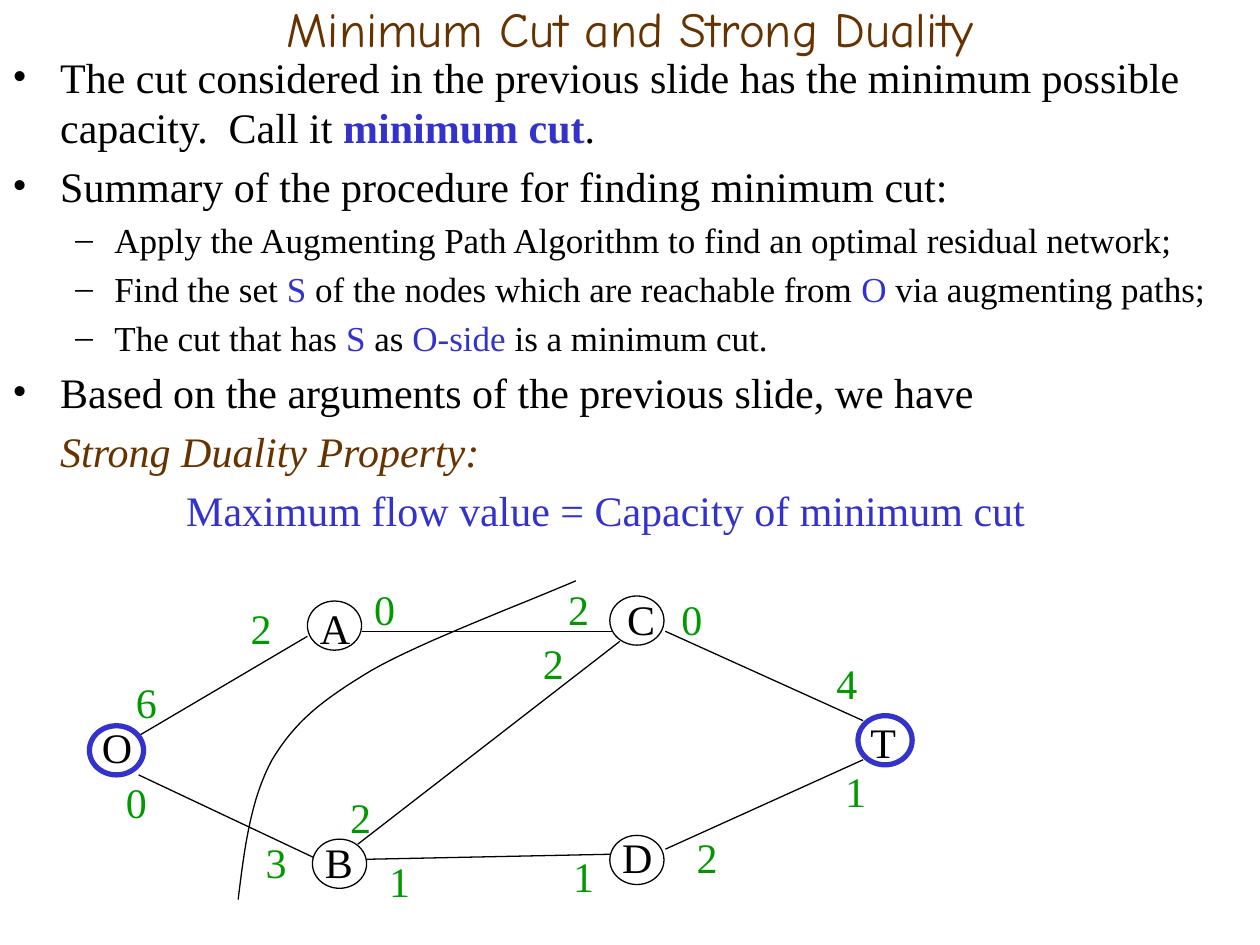
from lxml import etree
from pptx import Presentation
from pptx.dml.color import RGBColor
from pptx.enum.shapes import MSO_CONNECTOR, MSO_SHAPE
from pptx.enum.text import MSO_ANCHOR, PP_ALIGN
from pptx.oxml.ns import qn
from pptx.util import Inches, Pt

STRAIGHT = MSO_CONNECTOR.STRAIGHT
OVAL = MSO_SHAPE.OVAL
MIDDLE = MSO_ANCHOR.MIDDLE
CENTER = PP_ALIGN.CENTER

BLACK = RGBColor(0x00, 0x00, 0x00)
WHITE = RGBColor(0xFF, 0xFF, 0xFF)
BLUE = RGBColor(0x33, 0x33, 0xCC)
BROWN = RGBColor(0x66, 0x33, 0x00)
GREEN = RGBColor(0x00, 0x99, 0x00)
SERIF = "Times New Roman"
TITLE_FONT = "Comic Neue"

TITLE = "Minimum Cut and Strong Duality"

# Paragraph style: size, left margin, first-line indent, bullet
STYLES = {
    "point": (24, 0.38, -0.38, "•"),
    "step": (20, 0.81, -0.31, "–"),
    "heading": (24, 0.38, 0, None),
    "formula": (24, 1.38, 0, None),
}
# Each run: text, colour, bold, italic
PLAIN = (BLACK, False, False)
KEY = (BLUE, False, False)
BODY = [
    ("point", [
        ("The cut considered in the previous slide has the minimum possible capacity.  Call it ", *PLAIN),
        ("minimum cut", BLUE, True, False),
        (".", *PLAIN)]),
    ("point", [("Summary of the procedure for finding minimum cut:", *PLAIN)]),
    ("step", [("Apply the Augmenting Path Algorithm to find an optimal residual network;", *PLAIN)]),
    ("step", [
        ("Find the set ", *PLAIN), ("S", *KEY),
        (" of the nodes which are reachable from ", *PLAIN), ("O", *KEY),
        (" via augmenting paths;", *PLAIN)]),
    ("step", [
        ("The cut that has ", *PLAIN), ("S", *KEY), (" as ", *PLAIN),
        ("O-side", *KEY), (" is a minimum cut.", *PLAIN)]),
    ("point", [("Based on the arguments of the previous slide, we have", *PLAIN)]),
    ("heading", [("Strong Duality Property:", BROWN, False, True)]),
    ("formula", [("Maximum flow value = Capacity of minimum cut", *KEY)]),
]

NODE_SIZE = (0.43, 0.39)
# Node: letter, ellipse left and top, letter left and top, outline colour and width
NODES = [
    ("O", 0.71, 5.76, 0.71, 5.68, BLUE, 3),
    ("A", 2.44, 4.77, 2.44, 4.73, BLACK, 0.75),
    ("B", 2.48, 6.66, 2.48, 6.59, BLACK, 0.75),
    ("C", 4.84, 4.73, 4.88, 4.66, BLACK, 0.75),
    ("D", 4.84, 6.63, 4.84, 6.55, BLACK, 0.75),
    ("T", 6.81, 5.68, 6.81, 5.64, BLUE, 3),
]
# Edge: start x, y, end x, y, then the residual capacity (text, left, top) at each end
EDGES = [
    (1.1, 5.84, 2.44, 5.05, ("6", 0.98, 5.32), ("2", 1.89, 4.73)),  # O-A
    (1.1, 6.15, 2.52, 6.82, ("0", 0.9, 6.11), ("3", 2.01, 6.59)),  # O-B
    (2.87, 5.01, 4.88, 5.01, ("0", 2.87, 4.58), ("2", 4.41, 4.58)),  # A-C
    (2.84, 6.7, 4.92, 5.09, ("2", 2.68, 6.23), ("2", 4.21, 5.01)),  # B-C
    (2.91, 6.82, 4.84, 6.78, ("1", 2.99, 6.74), ("1", 4.45, 6.7)),  # B-D
    (5.28, 5.01, 6.85, 5.72, ("0", 5.31, 4.66), ("4", 6.54, 5.17)),  # C-T
    (5.28, 6.74, 6.85, 6.03, ("2", 5.43, 6.55), ("1", 6.61, 6.03)),  # D-T
]
CUT_START = (1.89, 7.14)
# Bezier segments: two control points and an end point
CUT_CURVES = [
    ((1.94, 6.73), (1.99, 6.34), (2.16, 6.03)),
    ((2.34, 5.73), (2.55, 5.56), (2.95, 5.32)),
    ((3.35, 5.09), (4.23, 4.76), (4.57, 4.61)),
]
CURVE_STEPS = 16


def add_frame(slide, left, top, width, height):
    box = slide.shapes.add_textbox(Inches(left), Inches(top), Inches(width), Inches(height))
    box.text_frame.word_wrap = True
    return box.text_frame


def add_span(para, text, size, color, bold=False, italic=False, font=SERIF):
    span = para.add_run()
    span.text = text
    span.font.name = font
    span.font.size = Pt(size)
    span.font.color.rgb = color
    span.font.bold = bold
    span.font.italic = italic


def add_label(slide, text, left, top, color, width=0.39):
    frame = add_frame(slide, left, top, width, 0.5)
    add_span(frame.paragraphs[0], text, 24, color)


def format_para(para, margin, indent, bullet):
    """Set the indents, the 20% space before and the bullet."""
    props = para._p.get_or_add_pPr()
    props.set("marL", str(Inches(margin)))
    props.set("indent", str(Inches(indent)))
    space = etree.SubElement(props, qn("a:spcBef"))
    etree.SubElement(space, qn("a:spcPct")).set("val", "20000")
    if bullet:
        etree.SubElement(props, qn("a:buFont")).set("typeface", SERIF)
        etree.SubElement(props, qn("a:buChar")).set("char", bullet)
    else:
        etree.SubElement(props, qn("a:buNone"))


def add_body(slide):
    frame = add_frame(slide, 0, 0.36, 10, 7.14)
    for index, (style, runs) in enumerate(BODY):
        para = frame.add_paragraph() if index else frame.paragraphs[0]
        size, margin, indent, bullet = STYLES[style]
        format_para(para, margin, indent, bullet)
        for text, color, bold, italic in runs:
            add_span(para, text, size, color, bold, italic)


def add_edge(slide, x1, y1, x2, y2):
    edge = slide.shapes.add_connector(STRAIGHT, Inches(x1), Inches(y1), Inches(x2), Inches(y2))
    edge.line.color.rgb = BLACK
    edge.line.width = Pt(0.75)
    etree.SubElement(edge._element.spPr, qn("a:effectLst"))


def set_outline(shape, color, width):
    shape.line.color.rgb = color
    shape.line.width = Pt(width)
    shape.shadow.inherit = False


def bezier_point(points, t):
    weights = ((1 - t) ** 3, 3 * t * (1 - t) ** 2, 3 * t ** 2 * (1 - t), t ** 3)
    return tuple(Inches(sum(w * p[axis] for w, p in zip(weights, points))) for axis in (0, 1))


def add_cut(slide):
    start, points = CUT_START, []
    for curve in CUT_CURVES:
        points += [bezier_point((start, *curve), step / CURVE_STEPS)
                   for step in range(1, CURVE_STEPS + 1)]
        start = curve[-1]
    builder = slide.shapes.build_freeform(*(Inches(value) for value in CUT_START))
    builder.add_line_segments(points, close=False)
    cut = builder.convert_to_shape()
    cut.fill.background()
    set_outline(cut, BLACK, 0.75)


def main():
    deck = Presentation()
    deck.slide_width, deck.slide_height = Inches(10), Inches(7.5)
    page = deck.slides.add_slide(deck.slide_layouts[6])

    title = add_frame(page, 0, 0, 10, 0.44)
    title.vertical_anchor = MIDDLE
    title.paragraphs[0].alignment = CENTER
    add_span(title.paragraphs[0], TITLE, 28, BROWN, font=TITLE_FONT)
    add_body(page)

    for *ends, near, far in EDGES:
        add_edge(page, *ends)
        add_label(page, *near, GREEN)
        add_label(page, *far, GREEN, width=0.35)
    for letter, left, top, text_left, text_top, color, width in NODES:
        node = page.shapes.add_shape(OVAL, Inches(left), Inches(top), *map(Inches, NODE_SIZE))
        node.fill.solid()
        node.fill.fore_color.rgb = WHITE
        set_outline(node, color, width)
        add_label(page, letter, text_left, text_top, BLACK, width=0.43)
    add_cut(page)

    deck.save("out.pptx")


if __name__ == "__main__":
    main()
